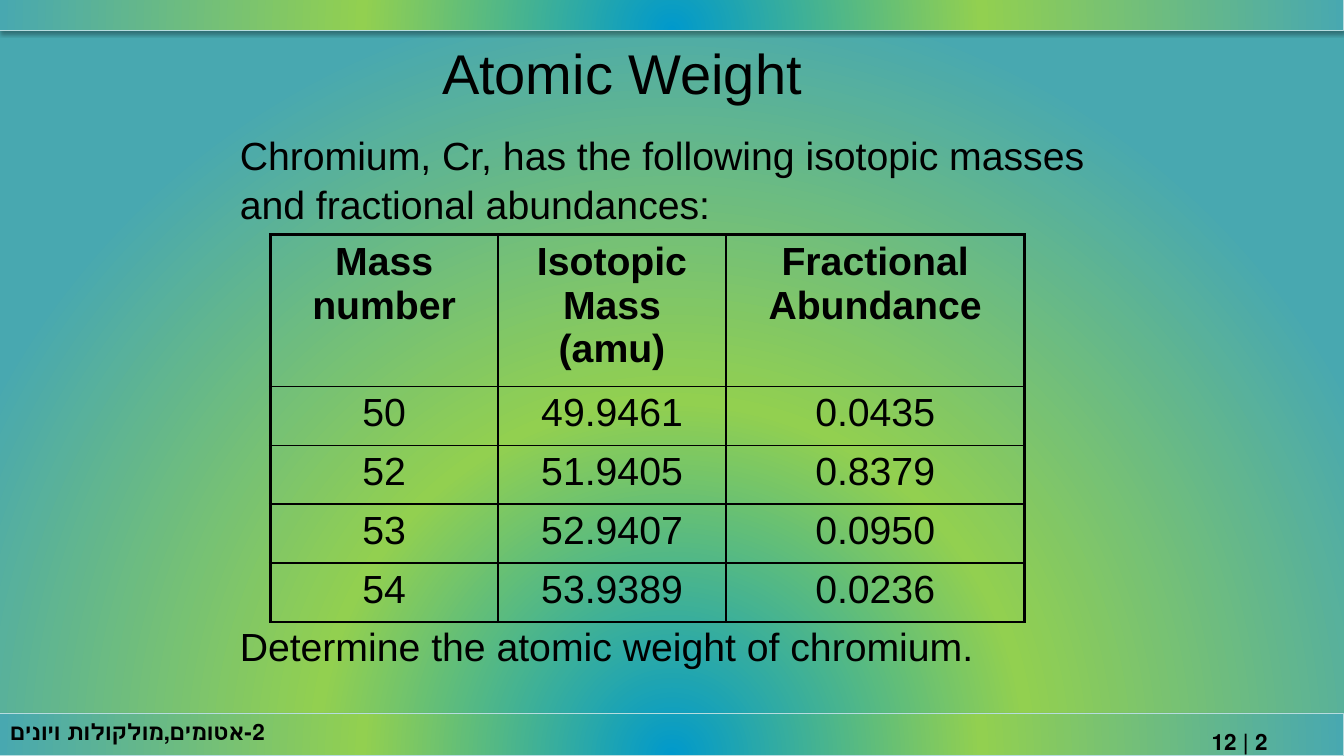
"""Build the slide on the atomic weight of chromium."""
import lxml.etree
import pptx
import pptx.dml.color
import pptx.enum.shapes
import pptx.enum.text
import pptx.oxml
import pptx.oxml.ns
import pptx.util

Inches = pptx.util.Inches
Pt = pptx.util.Pt
RGBColor = pptx.dml.color.RGBColor
ALIGN = pptx.enum.text.PP_ALIGN

BLACK = RGBColor(0x00, 0x00, 0x00)
BLUE = RGBColor(0x00, 0x99, 0xCC)
GREEN = RGBColor(0x92, 0xD0, 0x50)
TEAL = RGBColor(0x48, 0xA8, 0xB0)
PALE_TEAL = RGBColor(0xB6, 0xDC, 0xDF)

GRADIENT_STOPS = [(0, BLUE), (46000, GREEN), (100000, TEAL)]
BODY_FONT = {"name": "Arial", "size": Pt(28), "bold": False}
HEADER_FONT = {**BODY_FONT, "bold": True}
TITLE_FONT = {**BODY_FONT, "size": Pt(40)}
FOOTER_FONT = {"name": "Roboto", "size": Pt(16), "bold": True}

ISOTOPE_ROWS = [
    ("Mass number", "Isotopic Mass (amu)", "Fractional Abundance"),
    ("50", "49.9461", "0.0435"),
    ("52", "51.9405", "0.8379"),
    ("53", "52.9407", "0.0950"),
    ("54", "53.9389", "0.0236"),
]
COLUMN_WIDTHS = [2.26, 2.26, 2.96]
HEADER_HEIGHT = 1.4
ROW_HEIGHT = 0.585


def parse_drawing(xml):
    """Return an element from XML that uses the drawing namespace."""
    return pptx.oxml.parse_xml(xml.replace(" NS", " " + pptx.oxml.ns.nsdecls("a"), 1))


def apply_gradient(fill, owner):
    """Give a fill the circular gradient of the theme."""
    fill.gradient()
    gradient = owner.xpath(".//a:gradFill")[0]
    stops = "".join(
        f'<a:gs pos="{position}"><a:srgbClr val="{color}"/></a:gs>'
        for position, color in GRADIENT_STOPS
    )
    gradient.getparent().replace(gradient, parse_drawing(
        f'<a:gradFill NS rotWithShape="1"><a:gsLst>{stops}</a:gsLst><a:path path="circle">'
        '<a:fillToRect l="50000" t="130000" r="50000" b="-30000"/></a:path></a:gradFill>'
    ))


def add_bar(slide, top, height):
    """Add a full-width gradient bar with a soft shadow."""
    shape = slide.shapes.add_shape(
        pptx.enum.shapes.MSO_SHAPE.RECTANGLE,
        Inches(0), Inches(top), Inches(13.33), Inches(height),
    )
    apply_gradient(shape.fill, shape.element)
    shape.line.color.rgb = PALE_TEAL
    shape.line.width = Pt(0.75)
    shape.shadow.inherit = False
    effects = shape.element.xpath(".//a:effectLst")[0]
    effects.append(parse_drawing(
        f'<a:outerShdw NS blurRad="{Pt(3.1)}" dist="{Pt(1.8)}" dir="5400000" rotWithShape="0">'
        f'<a:srgbClr val="{BLACK}"><a:alpha val="35000"/></a:srgbClr></a:outerShdw>'
    ))


def write_paragraph(paragraph, text, font_format, paragraph_format):
    """Write black text with the given font and paragraph values."""
    paragraph.text = text
    for name, value in paragraph_format.items():
        setattr(paragraph, name, value)
    font = paragraph.runs[0].font
    for name, value in font_format.items():
        setattr(font, name, value)
    font.color.rgb = BLACK


def add_text(slide, box, texts, font_format, wrap=True, rtl=False, **paragraph_format):
    """Add a text box, with space_between setting paragraphs apart."""
    space_between = paragraph_format.pop("space_between", None)
    frame = slide.shapes.add_textbox(*map(Inches, box)).text_frame
    frame.word_wrap = wrap
    for index, text in enumerate(texts):
        paragraph = frame.add_paragraph() if index else frame.paragraphs[0]
        write_paragraph(paragraph, text, font_format, paragraph_format)
        if index:
            paragraph.space_before = space_between
        if rtl:
            paragraph._p.get_or_add_pPr().set("rtl", "1")


def set_borders(cell, outer_sides):
    """Draw the four cell borders, thicker on the outer sides."""
    properties = cell._tc.get_or_add_tcPr()
    for side in "LRTB":
        width = Pt(2.25 if side in outer_sides else 1)
        properties.append(parse_drawing(
            f'<a:ln{side} NS w="{width}"><a:solidFill><a:srgbClr val="{BLACK}"/>'
            f'</a:solidFill></a:ln{side}>'
        ))


def add_isotope_table(slide):
    """Add the unfilled table of isotopes."""
    last_row, last_column = len(ISOTOPE_ROWS) - 1, len(COLUMN_WIDTHS) - 1
    table = slide.shapes.add_table(
        len(ISOTOPE_ROWS), len(COLUMN_WIDTHS), Inches(2.68), Inches(2.33),
        Inches(sum(COLUMN_WIDTHS)), Inches(HEADER_HEIGHT + last_row * ROW_HEIGHT),
    ).table
    table.first_row = table.horz_banding = False
    for column, width in zip(table.columns, COLUMN_WIDTHS):
        column.width = Inches(width)
    for row_index, texts in enumerate(ISOTOPE_ROWS):
        table.rows[row_index].height = Inches(ROW_HEIGHT if row_index else HEADER_HEIGHT)
        for column_index, text in enumerate(texts):
            cell = table.cell(row_index, column_index)
            edges = {"L": column_index == 0, "R": column_index == last_column,
                     "T": row_index == 0, "B": row_index == last_row}
            set_borders(cell, [side for side, outer in edges.items() if outer])
            cell.fill.background()
            write_paragraph(
                cell.text_frame.paragraphs[0], text,
                BODY_FONT if row_index else HEADER_FONT, {"alignment": ALIGN.CENTER},
            )


def main():
    """Build and save the presentation."""
    presentation = pptx.Presentation()
    presentation.slide_width = Inches(13.33)
    presentation.slide_height = Inches(7.5)
    slide = presentation.slides.add_slide(presentation.slide_layouts[6])
    apply_gradient(slide.background.fill, slide.element)
    add_bar(slide, 7.08, 0.42)
    add_bar(slide, 0, 0.3)
    add_text(
        slide, (2.28, 1.23, 8.63, 1.67),
        ["Chromium, Cr, has the following isotopic masses and fractional abundances:",
         "Determine the atomic weight of chromium."],
        BODY_FONT, line_spacing=1.05, space_between=Pt(280),
    )
    add_text(slide, (9.56, 7.17, 3.11, 0.27), ["2 | 12"], FOOTER_FONT,
             rtl=True, alignment=ALIGN.RIGHT)
    add_isotope_table(slide)
    add_text(slide, (4.24, 0.33, 3.81, 0.77), ["Atomic Weight"], TITLE_FONT,
             wrap=False, rtl=True, alignment=ALIGN.RIGHT)
    add_text(slide, (0, 7.08, 11.67, 0.25), ["2-אטומים,מולקולות ויונים"], FOOTER_FONT,
             rtl=True, alignment=ALIGN.LEFT)
    presentation.save("out.pptx")


if __name__ == "__main__":
    main()
